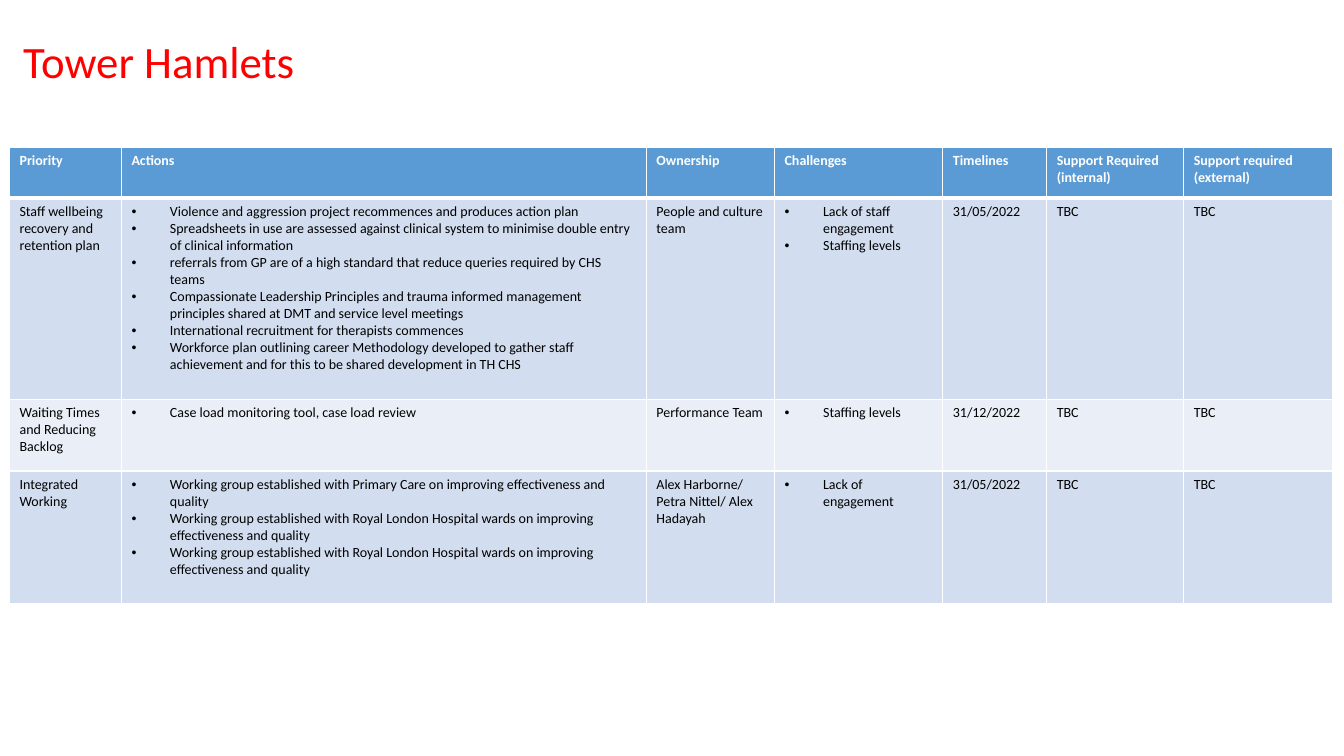
from dataclasses import dataclass

from lxml.etree import SubElement
from pptx import Presentation
from pptx.dml.color import RGBColor
from pptx.enum.text import MSO_ANCHOR, PP_ALIGN
from pptx.oxml import parse_xml
from pptx.oxml.ns import nsdecls, qn
from pptx.util import Cm, Pt


@dataclass(frozen=True)
class Theme:
    font: str = "Calibri"
    title_size: int = 32
    table_size: int = 10
    title: str = "FF0000"
    header: str = "5B9BD5"
    header_text: str = "FFFFFF"
    body_text: str = "000000"
    bands: tuple = ("D2DEEF", "EAEFF7")
    border: str = "FFFFFF"
    border_width: int = 1
    header_rule_width: int = 3
    bullet_indent: int = Cm(0.97)


THEME = Theme()

COLUMN_WIDTHS = (2.82, 13.23, 3.23, 4.24, 2.62, 3.45, 3.76)
ROW_HEIGHTS = (1.27, 5.08, 1.8, 3.33)
BULLETED_COLUMNS = (1, 3)

HEADINGS = (
    "Priority",
    "Actions",
    "Ownership",
    "Challenges",
    "Timelines",
    "Support Required (internal)",
    "Support required (external)",
)

PRIORITIES = (
    (
        "Staff wellbeing recovery and retention plan",
        (
            "Violence and aggression project recommences and produces action plan",
            "Spreadsheets in use are assessed against clinical system to minimise "
            "double entry of clinical information",
            "referrals from GP are of a high standard that reduce queries required "
            "by CHS teams",
            "Compassionate Leadership Principles and trauma informed management "
            "principles shared at DMT and service level meetings",
            "International recruitment for therapists commences",
            "Workforce plan outlining career Methodology developed to gather staff "
            "achievement and for this to be shared development in TH CHS",
        ),
        "People and culture team",
        ("Lack of staff engagement", "Staffing levels"),
        "31/05/2022",
        "TBC",
        "TBC",
    ),
    (
        "Waiting Times and Reducing Backlog",
        ("Case load monitoring tool, case load review",),
        "Performance Team",
        ("Staffing levels",),
        "31/12/2022",
        "TBC",
        "TBC",
    ),
    (
        "Integrated Working",
        (
            "Working group established with Primary Care on improving "
            "effectiveness and quality",
            "Working group established with Royal London Hospital wards on "
            "improving effectiveness and quality",
            "Working group established with Royal London Hospital wards on "
            "improving effectiveness and quality",
        ),
        "Alex Harborne/ Petra Nittel/ Alex Hadayah",
        ("Lack of engagement",),
        "31/05/2022",
        "TBC",
        "TBC",
    ),
)


def format_font(font, size, color, bold=False):
    font.name = THEME.font
    font.size = Pt(size)
    font.bold = bold
    font.color.rgb = RGBColor.from_string(color)


def add_bullet(paragraph):
    properties = paragraph._p.get_or_add_pPr()
    properties.set("marL", str(THEME.bullet_indent))
    properties.set("indent", str(-THEME.bullet_indent))
    SubElement(properties, qn("a:buFont")).set("typeface", "Arial")
    SubElement(properties, qn("a:buChar")).set("char", "•")


def set_borders(cell, top, bottom):
    """Draw all four cell edges, with top and bottom widths in points."""
    properties = cell._tc.get_or_add_tcPr()
    side = THEME.border_width
    edges = (("lnL", side), ("lnR", side), ("lnT", top), ("lnB", bottom))
    for position, (tag, width) in enumerate(edges):
        line = parse_xml(
            f'<a:{tag} {nsdecls("a")} w="{Pt(width)}"><a:solidFill>'
            f'<a:srgbClr val="{THEME.border}"/></a:solidFill></a:{tag}>'
        )
        properties.insert(position, line)


def fill_cell(cell, entries, fill, color, bold, bulleted):
    cell.fill.solid()
    cell.fill.fore_color.rgb = RGBColor.from_string(fill)
    frame = cell.text_frame
    frame.text = "\n".join(entries)
    for paragraph in frame.paragraphs:
        if bulleted:
            add_bullet(paragraph)
        format_font(paragraph.font, THEME.table_size, color, bold)


def add_title(slide, text, left, top, width, height):
    title = slide.shapes.title
    title.left, title.top, title.width, title.height = left, top, width, height
    frame = title.text_frame
    frame.text = text
    frame.word_wrap = True
    frame.vertical_anchor = MSO_ANCHOR.MIDDLE
    paragraph = frame.paragraphs[0]
    paragraph.alignment = PP_ALIGN.LEFT
    paragraph.line_spacing = 0.9
    format_font(paragraph.font, THEME.title_size, THEME.title)


def add_priority_table(slide, left, top):
    rows = (HEADINGS, *PRIORITIES)
    width, height = Cm(sum(COLUMN_WIDTHS)), Cm(sum(ROW_HEIGHTS))
    table = slide.shapes.add_table(
        len(rows), len(HEADINGS), left, top, width, height
    ).table
    for column, column_width in zip(table.columns, COLUMN_WIDTHS):
        column.width = Cm(column_width)
    for row, row_height in zip(table.rows, ROW_HEIGHTS):
        row.height = Cm(row_height)

    for row_index, values in enumerate(rows):
        is_header = row_index == 0
        fill = THEME.header if is_header else THEME.bands[(row_index - 1) % 2]
        color = THEME.header_text if is_header else THEME.body_text
        top_width = THEME.header_rule_width if row_index == 1 else THEME.border_width
        bottom_width = THEME.header_rule_width if is_header else THEME.border_width
        for column_index, value in enumerate(values):
            cell = table.cell(row_index, column_index)
            entries = (value,) if isinstance(value, str) else value
            bulleted = not is_header and column_index in BULLETED_COLUMNS
            fill_cell(cell, entries, fill, color, is_header, bulleted)
            set_borders(cell, top_width, bottom_width)


def main():
    presentation = Presentation()
    presentation.slide_width, presentation.slide_height = Cm(33.87), Cm(19.05)
    slide = presentation.slides.add_slide(presentation.slide_layouts[5])
    add_title(slide, "Tower Hamlets", Cm(0.33), Cm(0.81), Cm(10.67), Cm(1.6))
    add_priority_table(slide, Cm(0.24), Cm(3.72))
    presentation.save("out.pptx")


if __name__ == "__main__":
    main()
